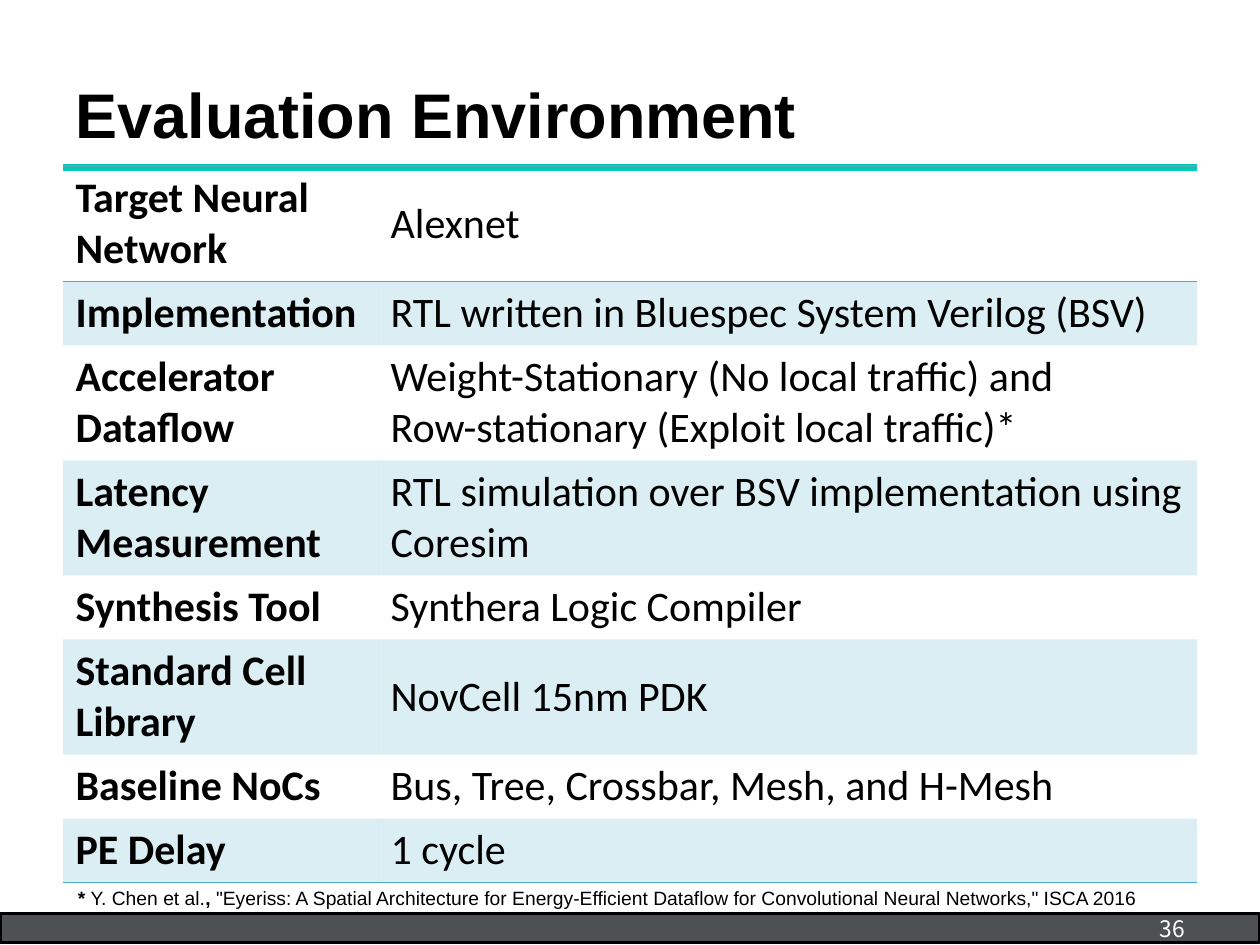
from dataclasses import dataclass

from lxml import etree
from pptx import Presentation, util as u
from pptx.dml.color import RGBColor
from pptx.enum import shapes, text
from pptx.oxml.ns import qn


@dataclass(frozen=True)
class Theme:
    black: str = "000000"
    white: str = "FFFFFF"
    bar: str = "4E5152"
    rule: str = "00CCAF"
    accent: str = "4BACC6"
    band_opacity: int = 20
    heading_font: str = "Arial"
    table_font: str = "Calibri"
    number_font: str = "Noto Sans CJK KR"
    title_size: int = 36
    table_size: int = 24
    number_size: int = 13
    note_size: int = 11


PLAIN_TABLE_STYLE = "{2D5ABB26-0587-4C30-8999-92F81FD0307C}"
LEFT, WIDTH = 1.27, 22.86
LABEL_WIDTH = 6.35
SINGLE_ROW, DOUBLE_ROW = 1.29, 2.32

ENVIRONMENT = [
    ("Target Neural Network", ["Alexnet"], DOUBLE_ROW),
    ("Implementation", ["RTL written in Bluespec System Verilog (BSV)"], SINGLE_ROW),
    ("Accelerator Dataflow", ["Weight-Stationary (No local traffic) and",
                              "Row-stationary (Exploit local traffic)*"], DOUBLE_ROW),
    ("Latency Measurement", ["RTL simulation over BSV implementation using Coresim"], DOUBLE_ROW),
    ("Synthesis Tool", ["Synthera Logic Compiler"], SINGLE_ROW),
    ("Standard Cell Library", ["NovCell 15nm PDK"], DOUBLE_ROW),
    ("Baseline NoCs", ["Bus, Tree, Crossbar, Mesh, and H-Mesh"], SINGLE_ROW),
    ("PE Delay", ["1 cycle"], SINGLE_ROW),
]

CITATION = [
    ("* ", True),
    ("Y. Chen et al.", False),
    (", ", True),
    ('"Eyeriss: A Spatial Architecture for Energy-Efficient Dataflow '
     'for Convolutional Neural Networks," ISCA 2016', False),
]


class SlideBuilder:
    def __init__(self, presentation, theme):
        self.theme = theme
        self.slide = presentation.slides.add_slide(presentation.slide_layouts[5])

    def add_run(self, paragraph, words, font, size, color, bold=False):
        run = paragraph.add_run()
        run.text = words
        run.font.name = font
        run.font.size = u.Pt(size)
        run.font.bold = bold
        run.font.color.rgb = RGBColor.from_string(color)

    def title(self, words, left, top, width, height):
        shape = self.slide.shapes.title
        shape.left, shape.top = u.Cm(left), u.Cm(top)
        shape.width, shape.height = u.Cm(width), u.Cm(height)
        frame = shape.text_frame
        frame.vertical_anchor = text.MSO_ANCHOR.BOTTOM
        paragraph = frame.paragraphs[0]
        paragraph.alignment = text.PP_ALIGN.LEFT
        self.add_run(paragraph, words, self.theme.heading_font,
                     self.theme.title_size, self.theme.black, True)

    def bar(self, left, top, width, height):
        shape = self.slide.shapes.add_shape(
            shapes.MSO_SHAPE.RECTANGLE, u.Cm(left), u.Cm(top), u.Cm(width), u.Cm(height))
        shape.shadow.inherit = False
        shape.fill.solid()
        shape.fill.fore_color.rgb = RGBColor.from_string(self.theme.bar)
        shape.line.color.rgb = RGBColor.from_string(self.theme.black)
        shape.line.width = u.Pt(2)

    def rule(self, left, top, width):
        connector = self.slide.shapes.add_connector(
            shapes.MSO_CONNECTOR.STRAIGHT,
            u.Cm(left), u.Cm(top), u.Cm(left + width), u.Cm(top))
        connector.line.color.rgb = RGBColor.from_string(self.theme.rule)
        connector.line.width = u.Pt(4)
        properties = connector._element.find(qn("p:spPr"))
        etree.SubElement(properties, qn("a:effectLst"))

    def text_box(self, runs, left, top, width, height, font, size, color,
                 alignment=text.PP_ALIGN.LEFT, anchor=text.MSO_ANCHOR.TOP, space_before=0):
        shape = self.slide.shapes.add_textbox(
            u.Cm(left), u.Cm(top), u.Cm(width), u.Cm(height))
        frame = shape.text_frame
        frame.word_wrap = True
        frame.vertical_anchor = anchor
        paragraph = frame.paragraphs[0]
        paragraph.alignment = alignment
        paragraph.space_before = u.Pt(space_before)
        for words, bold in runs:
            self.add_run(paragraph, words, font, size, color, bold)

    def border(self, cell, sides):
        properties = cell._tc.get_or_add_tcPr()
        for index, side in enumerate(sides):
            line = etree.Element(qn(f"a:{side}"), w=str(u.Pt(1)))
            fill = etree.SubElement(line, qn("a:solidFill"))
            etree.SubElement(fill, qn("a:srgbClr"), val=self.theme.accent)
            properties.insert(index, line)

    def fill_cell(self, cell, banded):
        if not banded:
            cell.fill.background()
            return
        cell.fill.solid()
        cell.fill.fore_color.rgb = RGBColor.from_string(self.theme.accent)
        color = cell._tc.tcPr.find(f".//{qn('a:srgbClr')}")
        etree.SubElement(color, qn("a:alpha"), val=str(self.theme.band_opacity * 1000))

    def write_cell(self, cell, lines, bold):
        cell.vertical_anchor = text.MSO_ANCHOR.MIDDLE
        frame = cell.text_frame
        for index, words in enumerate(lines):
            paragraph = frame.add_paragraph() if index else frame.paragraphs[0]
            self.add_run(paragraph, words, self.theme.table_font,
                         self.theme.table_size, self.theme.black, bold)

    def table(self, rows, left, top, width, label_width):
        height = sum(row_height for _, _, row_height in rows)
        table = self.slide.shapes.add_table(
            len(rows), 2, u.Cm(left), u.Cm(top), u.Cm(width), u.Cm(height)).table
        table.first_row = table.horz_banding = False
        table._tbl.tblPr.find(qn("a:tableStyleId")).text = PLAIN_TABLE_STYLE
        table.columns[0].width = u.Cm(label_width)
        table.columns[1].width = u.Cm(width - label_width)
        borders = {0: ("lnT", "lnB"), len(rows) - 1: ("lnB",)}
        for index, (label, lines, row_height) in enumerate(rows):
            table.rows[index].height = u.Cm(row_height)
            for column, content in enumerate(([label], lines)):
                cell = table.cell(index, column)
                self.write_cell(cell, content, column == 0)
                self.fill_cell(cell, index % 2 == 1)
                self.border(cell, borders.get(index, ()))


def main():
    theme = Theme()
    presentation = Presentation()
    presentation.slide_width, presentation.slide_height = u.Cm(25.4), u.Cm(19.05)
    builder = SlideBuilder(presentation, theme)
    builder.bar(0, 18.42, 25.4, 0.58)
    builder.rule(LEFT, 3.38, WIDTH)
    builder.title("Evaluation Environment", LEFT, 1.27, WIDTH, 1.9)
    builder.text_box([("36", False)], 20.52, 18.42, 3.61, 0.58, theme.number_font,
                     theme.number_size, theme.white,
                     text.PP_ALIGN.RIGHT, text.MSO_ANCHOR.MIDDLE)
    builder.table(ENVIRONMENT, LEFT, 3.35, WIDTH, LABEL_WIDTH)
    builder.text_box(CITATION, 1.32, 17.75, 22.56, 0.66, theme.heading_font,
                     theme.note_size, theme.black, space_before=2.2)
    presentation.save("out.pptx")


if __name__ == "__main__":
    main()
